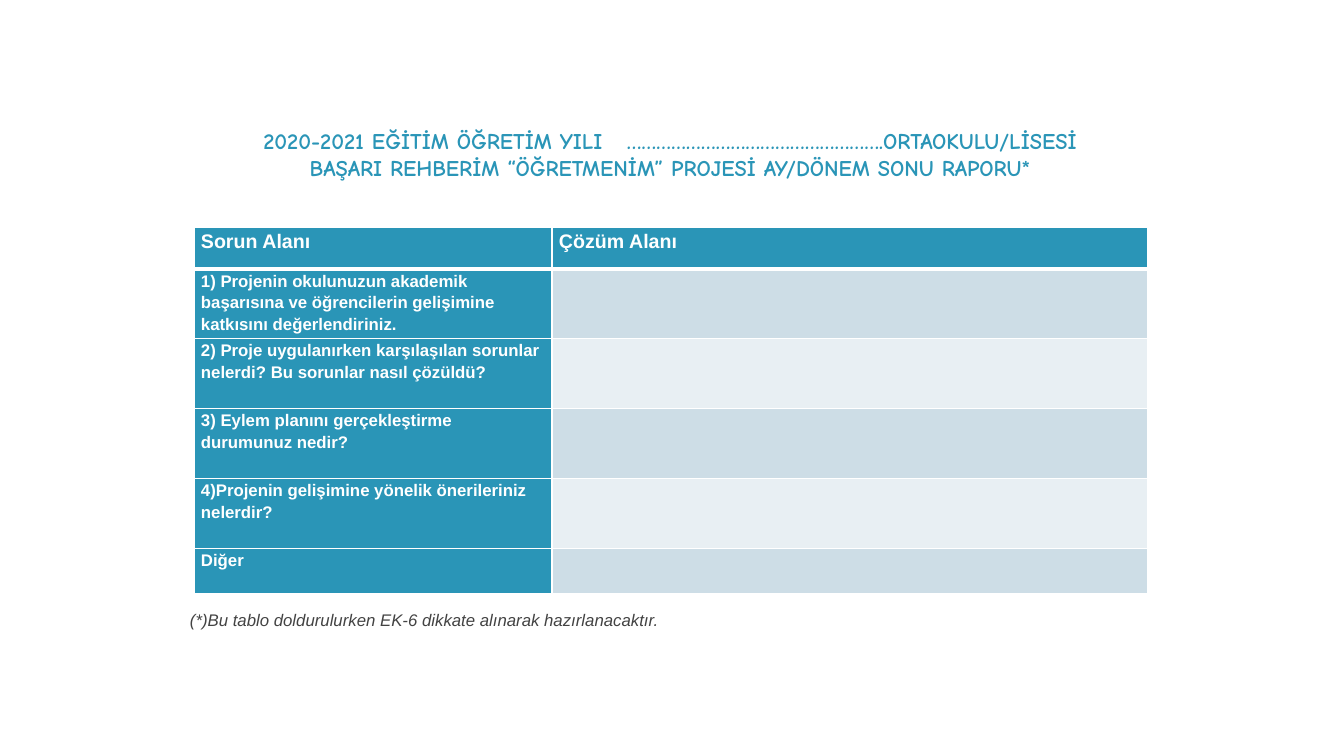
from dataclasses import dataclass

from lxml import etree
from pptx import Presentation
from pptx.dml.color import RGBColor
from pptx.enum.text import MSO_ANCHOR, PP_ALIGN
from pptx.oxml.ns import qn
from pptx.util import Pt

CENTER, LEFT = PP_ALIGN.CENTER, PP_ALIGN.LEFT
TOP = MSO_ANCHOR.TOP
EMU_PER_PX = 914400 / 100.8


@dataclass(frozen=True)
class Theme:
    accent: str = "2A95B7"
    white: str = "FFFFFF"
    note: str = "434343"
    bands: tuple = ("CDDDE6", "E8EFF3")
    title_font: str = "Comic Neue"
    body_font: str = "Arial"
    title_size: int = 16
    header_size: int = 14
    body_size: int = 12


THEME = Theme()
HEADERS = ("Sorun Alanı", "Çözüm Alanı")
QUESTIONS = (
    "1) Projenin okulunuzun akademik başarısına ve öğrencilerin gelişimine katkısını değerlendiriniz.",
    "2) Proje uygulanırken karşılaşılan sorunlar nelerdi? Bu sorunlar nasıl çözüldü?",
    "3) Eylem planını gerçekleştirme durumunuz nedir?",
    "4)Projenin gelişimine yönelik önerileriniz nelerdir?",
    "Diğer",
)
COL_WIDTHS = (358, 596)
ROW_HEIGHTS = (42, 69, 70, 70, 70, 45)


def px(n):
    return round(n * EMU_PER_PX)


def add_run(p, text, font, size, color, bold=False, italic=False):
    r = p.add_run()
    r.text = text
    r.font.name = font
    r.font.size = Pt(size)
    r.font.bold = bold
    r.font.italic = italic
    r.font.color.rgb = RGBColor.from_string(color)
    return r


def add_text_box(s, x, y, w, h, inset, align):
    tf = s.shapes.add_textbox(px(x), px(y), px(w), px(h)).text_frame
    tf.word_wrap = True
    tf.vertical_anchor = TOP
    tf.margin_left = tf.margin_right = tf.margin_top = tf.margin_bottom = px(inset)
    p = tf.paragraphs[0]
    p.alignment = align
    return p


def add_title(s):
    p = add_text_box(s, 154, 117, 1032, 110, 10, CENTER)
    style = (THEME.title_font, THEME.title_size, THEME.accent, True)
    add_run(p, "2020-2021 EĞİTİM ÖĞRETİM YILI", *style)
    gap = add_run(p, " ", *style)
    gap.font._element.set("spc", "1150")
    add_run(p, "…………………………………………….ORTAOKULU/LİSESİ", *style)
    p.add_line_break()
    add_run(p, "BAŞARI REHBERİM “ÖĞRETMENİM” PROJESİ AY/DÖNEM SONU RAPORU*", *style)


def set_borders(cell, bottom, top):
    tcPr = cell._tc.get_or_add_tcPr()
    widths = (("a:lnL", 1), ("a:lnR", 1), ("a:lnT", top), ("a:lnB", bottom))
    for i, (tag, width) in enumerate(widths):
        ln = etree.Element(qn(tag), w=str(Pt(width)))
        fill = etree.SubElement(ln, qn("a:solidFill"))
        etree.SubElement(fill, qn("a:srgbClr"), val=THEME.white)
        tcPr.insert(i, ln)


def fill_cell(cell, color, text="", size=THEME.body_size, space_after=10, top=1, bottom=1):
    cell.fill.solid()
    cell.fill.fore_color.rgb = RGBColor.from_string(color)
    cell.margin_left = cell.margin_right = px(7)
    cell.margin_top = cell.margin_bottom = 0
    cell.vertical_anchor = TOP
    set_borders(cell, bottom, top)
    if text:
        p = cell.text_frame.paragraphs[0]
        p.line_spacing = 1.15
        p.space_after = Pt(space_after)
        add_run(p, text, THEME.body_font, size, THEME.white, bold=True)


def add_report_table(s):
    table = s.shapes.add_table(
        len(ROW_HEIGHTS), len(COL_WIDTHS), px(194), px(227),
        px(sum(COL_WIDTHS)), px(sum(ROW_HEIGHTS)),
    ).table
    for col, width in zip(table.columns, COL_WIDTHS):
        col.width = px(width)
    for row, height in zip(table.rows, ROW_HEIGHTS):
        row.height = px(height)
    for i, text in enumerate(HEADERS):
        fill_cell(table.cell(0, i), THEME.accent, text, THEME.header_size, bottom=3)
    for i, text in enumerate(QUESTIONS):
        top = 3 if i == 0 else 1
        space_after = 0 if i == 0 else 10
        fill_cell(table.cell(i + 1, 0), THEME.accent, text, space_after=space_after, top=top)
        fill_cell(table.cell(i + 1, 1), THEME.bands[i % 2], top=top)


def add_footnote(s):
    p = add_text_box(s, 180, 600, 976, 61, 10, LEFT)
    add_run(p, "(*)Bu tablo doldurulurken EK-6 dikkate alınarak hazırlanacaktır.",
            THEME.body_font, THEME.body_size, THEME.note, italic=True)


def main():
    prs = Presentation()
    prs.slide_width, prs.slide_height = px(1344), px(756)
    s = prs.slides.add_slide(prs.slide_layouts[6])
    add_title(s)
    add_report_table(s)
    add_footnote(s)
    prs.save("out.pptx")


if __name__ == "__main__":
    main()
